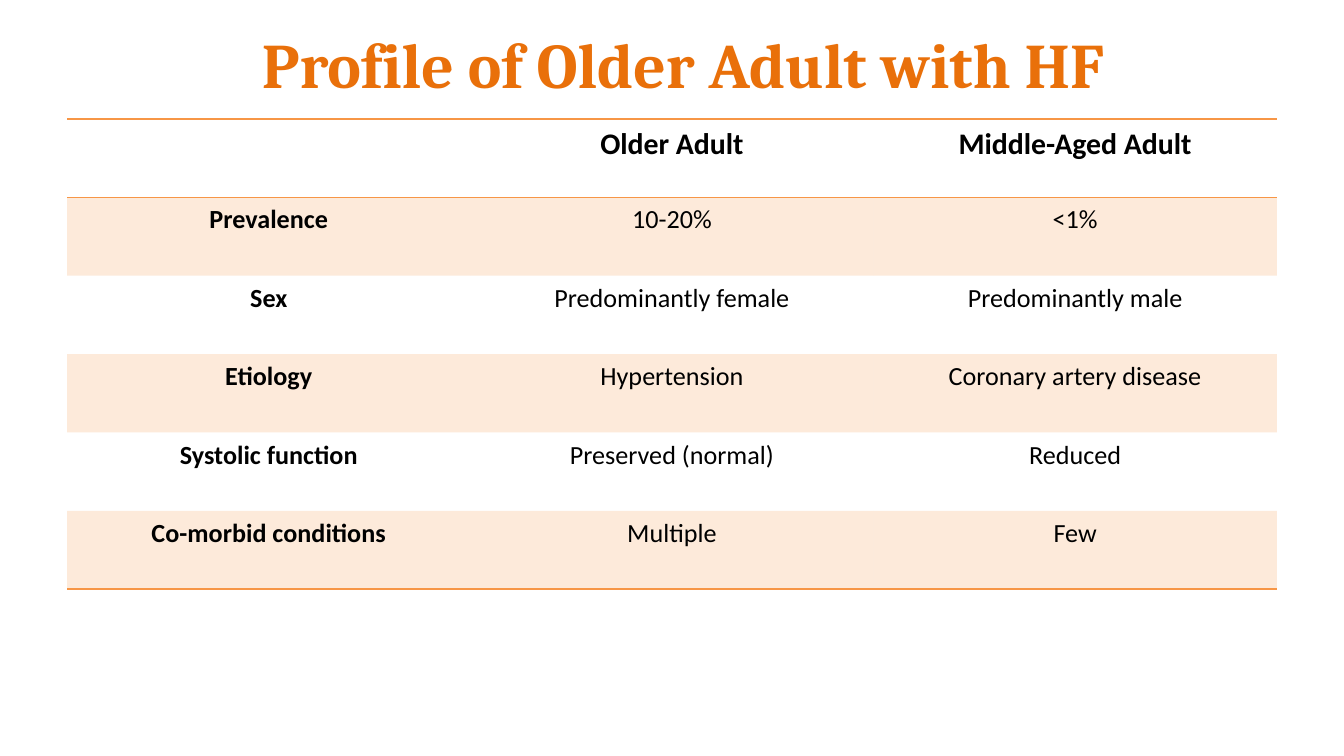
import lxml.etree
import pptx
import pptx.dml.color
import pptx.enum.text
import pptx.oxml.ns
import pptx.util

PX = 9525
ORANGE = pptx.dml.color.RGBColor(0xF7, 0x96, 0x46)
TITLE_ORANGE = pptx.dml.color.RGBColor(0xE9, 0x70, 0x0A)
BLACK = pptx.dml.color.RGBColor(0x00, 0x00, 0x00)

ROWS = [
    ("", "Older Adult", "Middle-Aged Adult"),
    ("Prevalence", "10-20%", "<1%"),
    ("Sex", "Predominantly female", "Predominantly male"),
    ("Etiology", "Hypertension", "Coronary artery disease"),
    ("Systolic function", "Preserved (normal)", "Reduced"),
    ("Co-morbid conditions", "Multiple", "Few"),
]


def add_element(parent, tag, **attributes):
    name = pptx.oxml.ns.qn(tag)
    return lxml.etree.SubElement(parent, name, attributes)


class SlideBuilder:
    def __init__(self, slide):
        self.slide = slide

    def add_text(self, para, text, font, size, color, bold):
        para.alignment = pptx.enum.text.PP_ALIGN.CENTER
        span = para.add_run()
        span.text = text
        span.font.name = font
        span.font.size = pptx.util.Pt(size)
        span.font.bold = bold
        span.font.color.rgb = color

    def title(self, text, left, top, width, height):
        box = self.slide.shapes.add_textbox(
            left * PX, top * PX, width * PX, height * PX)
        frame = box.text_frame
        frame.word_wrap = True
        frame.vertical_anchor = pptx.enum.text.MSO_ANCHOR.MIDDLE
        self.add_text(frame.paragraphs[0], text, "Cambria", 34, TITLE_ORANGE, True)

    def borders(self, cell, ruled_sides):
        properties = cell._tc.get_or_add_tcPr()
        for side in "LRTB":
            line = add_element(properties, f"a:ln{side}", w=str(pptx.util.Pt(1)))
            if side in ruled_sides:
                fill = add_element(line, "a:solidFill")
                add_element(fill, "a:srgbClr", val=str(ORANGE))
            else:
                add_element(line, "a:noFill")

    def shade(self, cell, shaded):
        if not shaded:
            cell.fill.background()
            return
        cell.fill.solid()
        cell.fill.fore_color.rgb = ORANGE
        fill = cell._tc.tcPr.find(pptx.oxml.ns.qn("a:solidFill"))
        add_element(fill[0], "a:alpha", val="20000")

    def table(self, rows, left, top, column_width, row_height):
        last = len(rows) - 1
        columns = len(rows[0])
        table = self.slide.shapes.add_table(
            len(rows), columns, left * PX, top * PX,
            columns * column_width * PX, len(rows) * row_height * PX).table
        table.horz_banding = False
        for row_index, texts in enumerate(rows):
            header = row_index == 0
            ruled_sides = {0: "TB", 1: "T", last: "B"}.get(row_index, "")
            for column_index, text in enumerate(texts):
                cell = table.cell(row_index, column_index)
                self.borders(cell, ruled_sides)
                self.shade(cell, row_index % 2 == 1)
                if text:
                    self.add_text(cell.text_frame.paragraphs[0], text, "Calibri",
                                  16 if header else 14, BLACK,
                                  header or column_index == 0)


def main():
    deck = pptx.Presentation()
    deck.slide_width = 960 * PX
    deck.slide_height = 540 * PX
    builder = SlideBuilder(deck.slides.add_slide(deck.slide_layouts[6]))
    builder.title("Profile of Older Adult with HF", 56, 0, 864, 90)
    builder.table(ROWS, 48, 85, 288, 56)
    deck.save("out.pptx")


if __name__ == "__main__":
    main()
